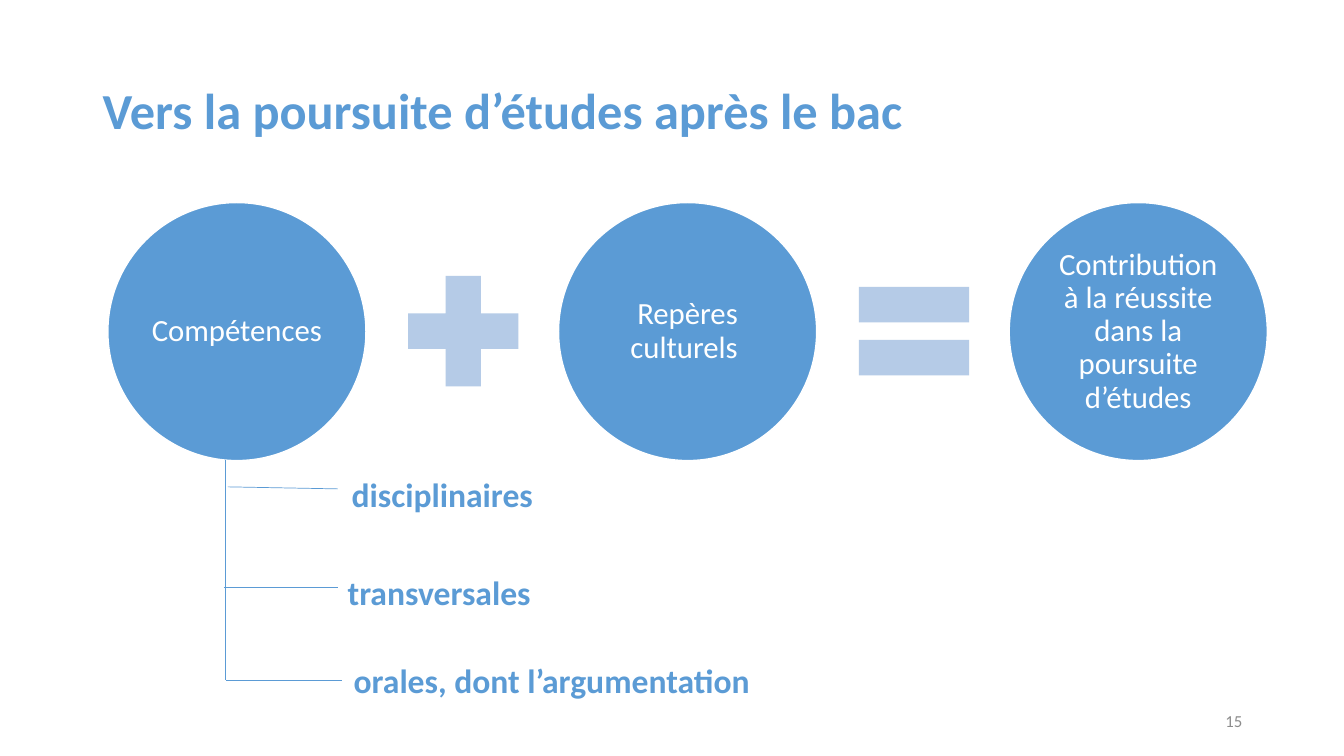
from dataclasses import dataclass

from lxml import etree
from pptx import Presentation
from pptx.dml.color import RGBColor
from pptx.enum import shapes, text
from pptx.oxml import ns
from pptx.util import Emu, Pt

PX = 9144
FONT = "Calibri"
BLUE = RGBColor(0x5B, 0x9B, 0xD5)
PALE_BLUE = RGBColor(0xB5, 0xCB, 0xE7)
WHITE = RGBColor(0xFF, 0xFF, 0xFF)
GREY = RGBColor(0x8C, 0x8C, 0x8C)

EQUATION_LEFT, EQUATION_TOP, EQUATION_STEP = 107, 201, 447
CIRCLE_SIZE, SIGN_SIZE = 256, 149
SIGN_OFFSET_X = 278
SIGN_OFFSET_Y = (CIRCLE_SIZE - SIGN_SIZE) // 2

TERMS = [
    "Compétences",
    "Repères culturels ",
    "Contribution à la réussite dans la poursuite d’études",
]
SIGNS = [shapes.MSO_SHAPE.MATH_PLUS, shapes.MSO_SHAPE.MATH_EQUAL]


@dataclass(frozen=True)
class Label:
    words: str
    left: int
    top: int
    width: int
    height: int
    size: int
    color: RGBColor = BLUE
    bold: bool = True
    align: text.PP_ALIGN = text.PP_ALIGN.LEFT
    anchor: text.MSO_ANCHOR = text.MSO_ANCHOR.TOP
    spacing: float = 1.0


@dataclass(frozen=True)
class Branch:
    x1: int
    y1: int
    x2: int
    y2: int


TITLE = Label("Vers la poursuite d’études après le bac", 92, 40, 1150, 145, 36,
              anchor=text.MSO_ANCHOR.MIDDLE, spacing=0.9)
PAGE_NUMBER = Label("15", 942, 695, 300, 40, 12, GREY, False,
                    text.PP_ALIGN.RIGHT, text.MSO_ANCHOR.MIDDLE)
SKILLS = [
    Label("disciplinaires", 339, 465, 563, 50, 24),
    Label("transversales", 335, 562, 563, 50, 24),
    Label("orales, dont l’argumentation", 341, 650, 646, 50, 24),
]
BRANCHES = [
    Branch(224, 456, 224, 675),
    Branch(226, 483, 335, 485),
    Branch(222, 583, 335, 583),
    Branch(224, 675, 339, 675),
]


def px(length: int) -> Emu:
    return Emu(length * PX)


def write(frame, words: str, size: int, color: RGBColor, bold: bool,
          align: text.PP_ALIGN, anchor: text.MSO_ANCHOR, spacing: float) -> None:
    frame.word_wrap = True
    frame.vertical_anchor = anchor
    paragraph = frame.paragraphs[0]
    paragraph.alignment = align
    paragraph.line_spacing = spacing
    run = paragraph.add_run()
    run.text = words
    run.font.name = FONT
    run.font.size = Pt(size)
    run.font.bold = bold
    run.font.color.rgb = color


def draw_label(slide, label: Label) -> None:
    box = slide.shapes.add_textbox(px(label.left), px(label.top),
                                   px(label.width), px(label.height))
    write(box.text_frame, label.words, label.size, label.color, label.bold,
          label.align, label.anchor, label.spacing)


def draw_term(slide, words: str, left: int) -> None:
    circle = slide.shapes.add_shape(shapes.MSO_SHAPE.OVAL, px(left), px(EQUATION_TOP),
                                    px(CIRCLE_SIZE), px(CIRCLE_SIZE))
    circle.shadow.inherit = False
    circle.fill.solid()
    circle.fill.fore_color.rgb = BLUE
    circle.line.color.rgb = WHITE
    circle.line.width = Pt(1)
    frame = circle.text_frame
    frame.margin_left = frame.margin_right = px(3)
    frame.margin_top = frame.margin_bottom = px(3)
    write(frame, words, 22, WHITE, False, text.PP_ALIGN.CENTER,
          text.MSO_ANCHOR.MIDDLE, 0.9)


def draw_sign(slide, preset: shapes.MSO_SHAPE, left: int) -> None:
    sign = slide.shapes.add_shape(preset, px(left), px(EQUATION_TOP + SIGN_OFFSET_Y),
                                  px(SIGN_SIZE), px(SIGN_SIZE))
    sign.shadow.inherit = False
    sign.fill.solid()
    sign.fill.fore_color.rgb = PALE_BLUE
    sign.line.fill.background()


def draw_branch(slide, branch: Branch) -> None:
    line = slide.shapes.add_connector(shapes.MSO_CONNECTOR.STRAIGHT,
                                      px(branch.x1), px(branch.y1),
                                      px(branch.x2), px(branch.y2))
    line.line.color.rgb = BLUE
    line.line.width = Pt(0.5)
    etree.SubElement(line._element.spPr, ns.qn("a:effectLst"))


def main() -> None:
    deck = Presentation()
    deck.slide_width, deck.slide_height = px(1333), px(750)
    slide = deck.slides.add_slide(deck.slide_layouts[6])

    draw_label(slide, TITLE)
    for index, words in enumerate(TERMS):
        draw_term(slide, words, EQUATION_LEFT + index * EQUATION_STEP)
    for index, preset in enumerate(SIGNS):
        draw_sign(slide, preset, EQUATION_LEFT + index * EQUATION_STEP + SIGN_OFFSET_X)
    for branch in BRANCHES:
        draw_branch(slide, branch)
    for label in [*SKILLS, PAGE_NUMBER]:
        draw_label(slide, label)

    deck.save("out.pptx")


if __name__ == "__main__":
    main()
